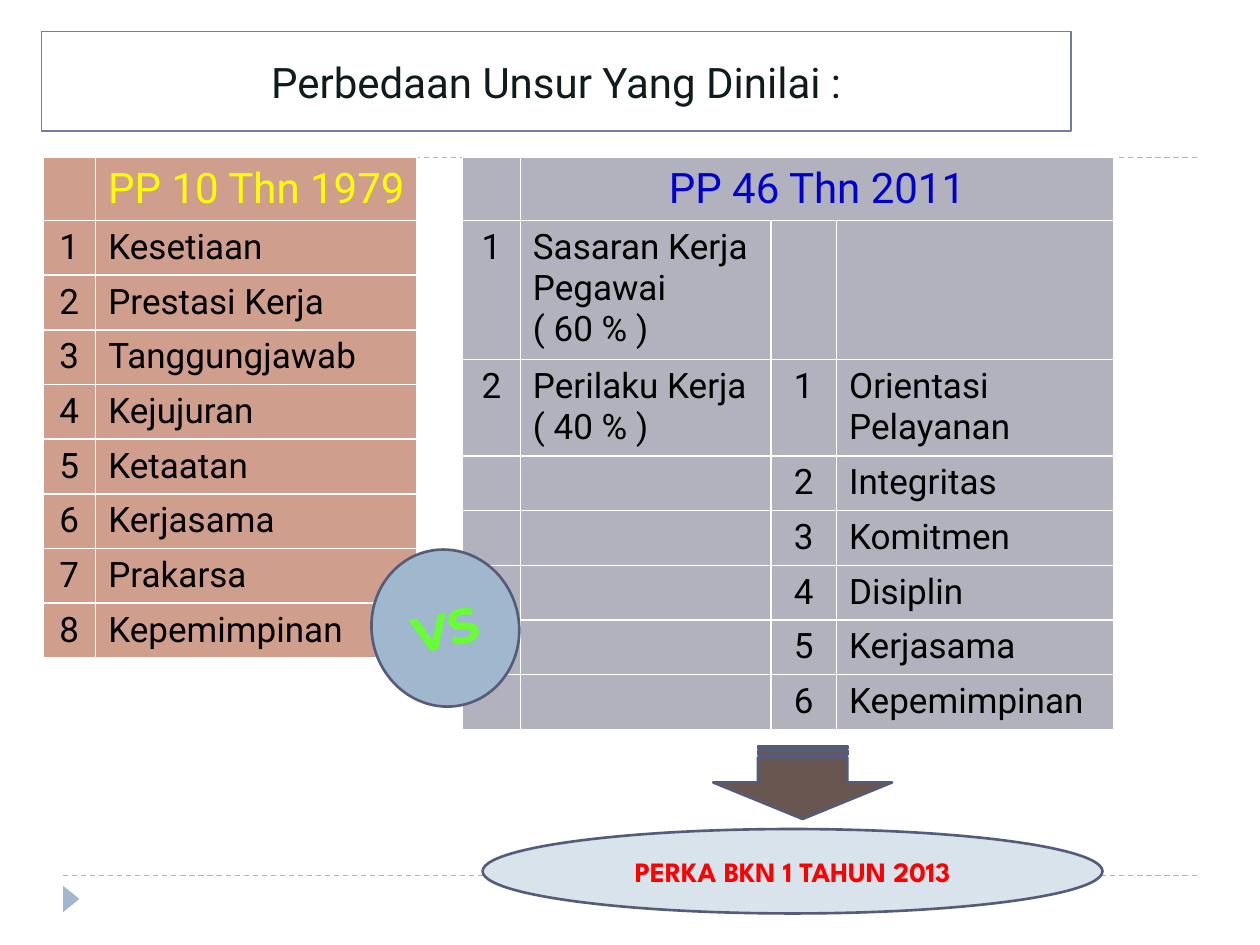
from lxml.etree import SubElement
from pptx import Presentation
from pptx.dml.color import RGBColor
from pptx.enum.dml import MSO_LINE
from pptx.enum.shapes import MSO_CONNECTOR, MSO_SHAPE as Shape
from pptx.enum.text import MSO_ANCHOR as Anchor, PP_ALIGN as Align
from pptx.oxml.ns import qn
from pptx.util import Inches, Pt

THEME = {
    "body_font": "Roboto", "badge_font": "Montserrat", "note_font": "League Spartan",
    "heading_size": 24, "body_size": 20, "badge_size": 28, "note_size": 16,
    "title": "101B1D", "title_line": "727CA3", "body": "000000",
    "accent": "9FB8CD", "outline": "545C79", "arrow": "6A5650",
    "badge_text": "66FF33", "note_fill": "D9E3EB", "note_text": "FF0000",
}
TITLE = "Perbedaan Unsur Yang Dinilai :"
BADGE = "VS"
NOTE = "PERKA BKN 1 TAHUN 2013"

OLD_FACTORS = ["Kesetiaan", "Prestasi Kerja", "Tanggungjawab", "Kejujuran",
               "Ketaatan", "Kerjasama", "Prakarsa", "Kepemimpinan"]
MAIN_FACTORS = ["Sasaran Kerja Pegawai\n( 60 % )", "Perilaku Kerja\n( 40 % )"]
BEHAVIOURS = ["Orientasi Pelayanan", "Integritas", "Komitmen", "Disiplin",
              "Kerjasama", "Kepemimpinan"]


def numbered(items):
    return [(str(number), item) for number, item in enumerate(items, 1)]


BLANK_PAIR = ("", "")
main_rows = numbered(MAIN_FACTORS) + [BLANK_PAIR] * (len(BEHAVIOURS) - 1)
behaviour_rows = [BLANK_PAIR] + numbered(BEHAVIOURS)

REGULATIONS = [
    {"heading": "PP 10 Thn 1979", "heading_color": "FFFF00", "left": 0.34,
     "columns": [0.42, 2.55], "fill": "9E3611", "opacity": 48,
     "rows": numbered(OLD_FACTORS)},
    {"heading": "PP 46 Thn 2011", "heading_color": "0000CC", "left": 3.67,
     "columns": [0.46, 1.99, 0.52, 2.2], "fill": "B2B2BE", "opacity": 100,
     "rows": [main + sub for main, sub in zip(main_rows, behaviour_rows)]},
]
TABLE_TOP, ROW_HEIGHT = 1.25, 0.41
HEADING_MARGIN = 0.08


def rgb(color):
    return RGBColor.from_string(color)


def write(frame, text, font, size, color, align=Align.CENTER, bold=False):
    frame.word_wrap = True
    frame.text = text
    for paragraph in frame.paragraphs:
        paragraph.alignment = align
        paragraph.font.name = font
        paragraph.font.size = Pt(size)
        paragraph.font.bold = bold
        paragraph.font.color.rgb = rgb(color)


def add_figure(slide, preset, box, fill, line=None, rotation=0):
    figure = slide.shapes.add_shape(preset, *map(Inches, box))
    figure.shadow.inherit = False
    figure.rotation = rotation
    figure.fill.solid()
    figure.fill.fore_color.rgb = rgb(fill)
    if line:
        figure.line.color.rgb = rgb(line)
        figure.line.width = Pt(1.5)
    else:
        figure.line.fill.background()
    return figure


def add_rule(slide, y):
    rule = slide.shapes.add_connector(
        MSO_CONNECTOR.STRAIGHT, Inches(0.5), Inches(y), Inches(9.5), Inches(y))
    rule.line.color.rgb = rgb(THEME["accent"])
    rule.line.width = Pt(0.75)
    rule.line.dash_style = MSO_LINE.DASH
    SubElement(rule.element.spPr, qn("a:effectLst"))


def paint_cell(cell, fill, opacity):
    cell.fill.solid()
    cell.fill.fore_color.rgb = rgb(fill)
    if opacity < 100:
        solid = cell._tc.get_or_add_tcPr().find(qn("a:solidFill"))
        SubElement(solid.find(qn("a:srgbClr")), qn("a:alpha"), val=str(opacity * 1000))


def add_regulation(slide, regulation):
    """Add one table; its white grid comes from the default table style."""
    columns = regulation["columns"]
    blanks = [""] * (len(columns) - 2)
    rows = [("", regulation["heading"], *blanks)] + regulation["rows"]
    table = slide.shapes.add_table(
        len(rows), len(columns), Inches(regulation["left"]), Inches(TABLE_TOP),
        Inches(sum(columns)), Inches(ROW_HEIGHT * len(rows))).table
    table.horz_banding = False
    for column, width in zip(table.columns, columns):
        column.width = Inches(width)
    for r, row in enumerate(rows):
        table.rows[r].height = Inches(ROW_HEIGHT)
        for c, text in enumerate(row):
            cell = table.cell(r, c)
            paint_cell(cell, regulation["fill"], regulation["opacity"])
            if text and r == 0:
                cell.vertical_anchor = Anchor.MIDDLE
                cell.margin_left = cell.margin_right = Inches(HEADING_MARGIN)
                write(cell.text_frame, text, THEME["body_font"],
                      THEME["heading_size"], regulation["heading_color"])
            elif text:
                write(cell.text_frame, text, THEME["body_font"], THEME["body_size"],
                      THEME["body"], Align.LEFT if c % 2 else Align.CENTER)
    if blanks:
        table.cell(0, 1).merge(table.cell(0, len(columns) - 1))


def main():
    deck = Presentation()
    deck.slide_width, deck.slide_height = Inches(10), Inches(7.5)
    slide = deck.slides.add_slide(deck.slide_layouts[6])

    for y in (6.95, 1.25):
        add_rule(slide, y)
    add_figure(slide, Shape.ISOSCELES_TRIANGLE, (0.46, 7.07, 0.21, 0.13),
               THEME["accent"], rotation=90)

    title = slide.shapes.add_textbox(*map(Inches, (0.33, 0.25, 8.17, 0.79)))
    title.line.color.rgb = rgb(THEME["title_line"])
    title.line.width = Pt(0.75)
    title.text_frame.vertical_anchor = Anchor.MIDDLE
    write(title.text_frame, TITLE, THEME["body_font"], THEME["heading_size"], THEME["title"])

    for regulation in REGULATIONS:
        add_regulation(slide, regulation)

    badge = add_figure(slide, Shape.OVAL, (2.95, 4.36, 1.17, 1.25),
                       THEME["accent"], THEME["outline"], rotation=347.9)
    write(badge.text_frame, BADGE, THEME["badge_font"], THEME["badge_size"],
          THEME["badge_text"], bold=True)
    add_figure(slide, Shape.STRIPED_RIGHT_ARROW, (6.08, 5.5, 0.58, 1.42),
               THEME["arrow"], THEME["outline"], rotation=90)
    note = add_figure(slide, Shape.OVAL, (3.83, 6.58, 4.92, 0.67),
                      THEME["note_fill"], THEME["outline"])
    write(note.text_frame, NOTE, THEME["note_font"], THEME["note_size"],
          THEME["note_text"], bold=True)

    deck.save("out.pptx")


if __name__ == "__main__":
    main()
